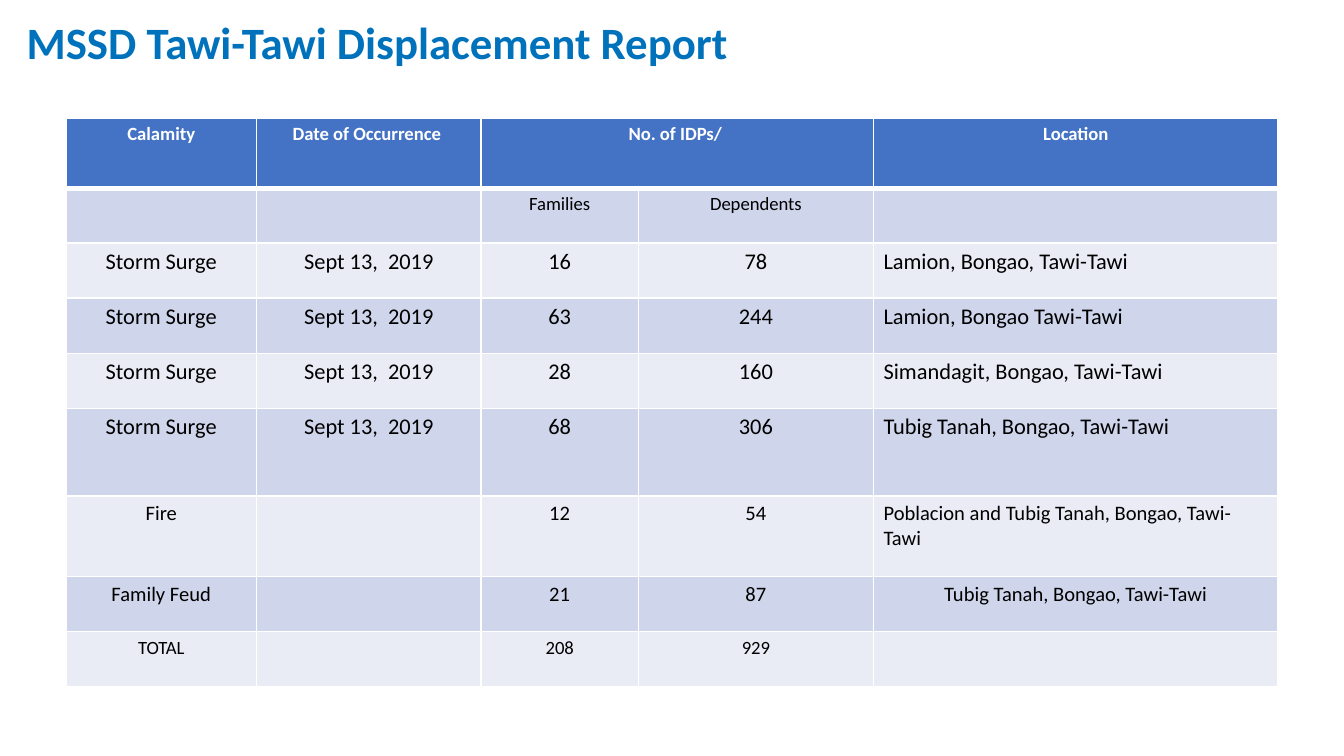
from dataclasses import dataclass

from lxml import etree
from pptx import Presentation
from pptx.dml.color import RGBColor
from pptx.enum.text import MSO_AUTO_SIZE, PP_ALIGN
from pptx.oxml.ns import qn
from pptx.table import Table, _Cell
from pptx.text.text import _Paragraph
from pptx.util import Emu, Inches, Pt

CENTER = PP_ALIGN.CENTER
LEFT = PP_ALIGN.LEFT
FIT_SHAPE = MSO_AUTO_SIZE.SHAPE_TO_FIT_TEXT

FONT = "Calibri"
COLORS = {
    "title": "0072BC",
    "header": "4472C4",
    "dark_band": "CFD5EA",
    "light_band": "E9EBF5",
    "white": "FFFFFF",
    "black": "000000",
}
SLIDE_WIDTH = Inches(10)
SLIDE_HEIGHT = Emu(SLIDE_WIDTH * 9 // 16)
COLUMN_WIDTHS = (1.42, 1.67, 1.17, 1.75, 3.01)
HEADER_BORDERS = {"a:lnL": 1, "a:lnR": 1, "a:lnT": 1, "a:lnB": 3}
SURGE = "Storm Surge"
SURGE_DATE = "Sept 13,  2019"


@dataclass(frozen=True)
class ReportRow:
    texts: tuple[str, str, str, str, str]
    size: int = 12
    height: float = 0.41
    location_align: PP_ALIGN = LEFT


ROWS = (
    ReportRow(("Calamity", "Date of Occurrence ", "No. of IDPs/ ", "", "Location"), 10, 0.52, CENTER),
    ReportRow(("", "", "Families", "Dependents", ""), 10),
    ReportRow((SURGE, SURGE_DATE, "16", "78", "Lamion, Bongao, Tawi-Tawi")),
    ReportRow((SURGE, SURGE_DATE, "63", "244", "Lamion, Bongao Tawi-Tawi")),
    ReportRow((SURGE, SURGE_DATE, "28", "160", "Simandagit, Bongao, Tawi-Tawi")),
    ReportRow((SURGE, SURGE_DATE, "68", "306", "Tubig Tanah, Bongao, Tawi-Tawi"), height=0.65),
    ReportRow(("Fire", "", "12", "54", "Poblacion and Tubig Tanah, Bongao, Tawi-Tawi"), 11, 0.6),
    ReportRow(("Family Feud", "", "21", "87", "Tubig Tanah, Bongao, Tawi-Tawi"), 11, location_align=CENTER),
    ReportRow(("TOTAL", "", "208", "929", ""), 10),
)


def style_paragraph(para: _Paragraph, size: int, color: str, bold: bool) -> None:
    para.font.name = FONT
    para.font.size = Pt(size)
    para.font.bold = bold
    para.font.color.rgb = RGBColor.from_string(COLORS[color])


def add_header_borders(cell: _Cell) -> None:
    properties = cell._tc.get_or_add_tcPr()
    for tag, points in HEADER_BORDERS.items():
        line = etree.SubElement(properties, qn(tag), w=str(Pt(points)))
        fill = etree.SubElement(line, qn("a:solidFill"))
        etree.SubElement(fill, qn("a:srgbClr"), val=COLORS["white"])


def fill_row(table: Table, index: int, row: ReportRow) -> None:
    is_header = index == 0
    band = "header" if is_header else "dark_band" if index % 2 else "light_band"
    table.rows[index].height = Inches(row.height)
    for column, text in enumerate(row.texts):
        cell = table.cell(index, column)
        cell.margin_left = cell.margin_right = Pt(5.4)
        cell.margin_top = cell.margin_bottom = Pt(2.7)
        if is_header:
            add_header_borders(cell)
        cell.fill.solid()
        cell.fill.fore_color.rgb = RGBColor.from_string(COLORS[band])
        if text:
            para = cell.text_frame.paragraphs[0]
            para.text = text
            para.alignment = row.location_align if column == 4 else CENTER
            style_paragraph(para, row.size, "white" if is_header else "black", is_header)


def main() -> None:
    deck = Presentation()
    deck.slide_width, deck.slide_height = SLIDE_WIDTH, SLIDE_HEIGHT
    page = deck.slides.add_slide(deck.slide_layouts[6])

    table = page.shapes.add_table(
        len(ROWS),
        len(COLUMN_WIDTHS),
        Emu(int(SLIDE_WIDTH * 0.049)),
        Inches(0.88),
        Inches(sum(COLUMN_WIDTHS)),
        Inches(sum(row.height for row in ROWS)),
    ).table
    for column, width in zip(table.columns, COLUMN_WIDTHS):
        column.width = Inches(width)
    for index, row in enumerate(ROWS):
        fill_row(table, index, row)
    table.cell(0, 2).merge(table.cell(0, 3))

    box = page.shapes.add_textbox(
        Emu(int(SLIDE_WIDTH * 0.01)), Inches(0.06), Emu(int(SLIDE_WIDTH * 0.678)), Inches(0.5)
    )
    box.text_frame.word_wrap = True
    box.text_frame.auto_size = FIT_SHAPE
    para = box.text_frame.paragraphs[0]
    para.text = "MSSD Tawi-Tawi Displacement Report"
    style_paragraph(para, 24, "title", True)

    deck.save("out.pptx")


if __name__ == "__main__":
    main()
